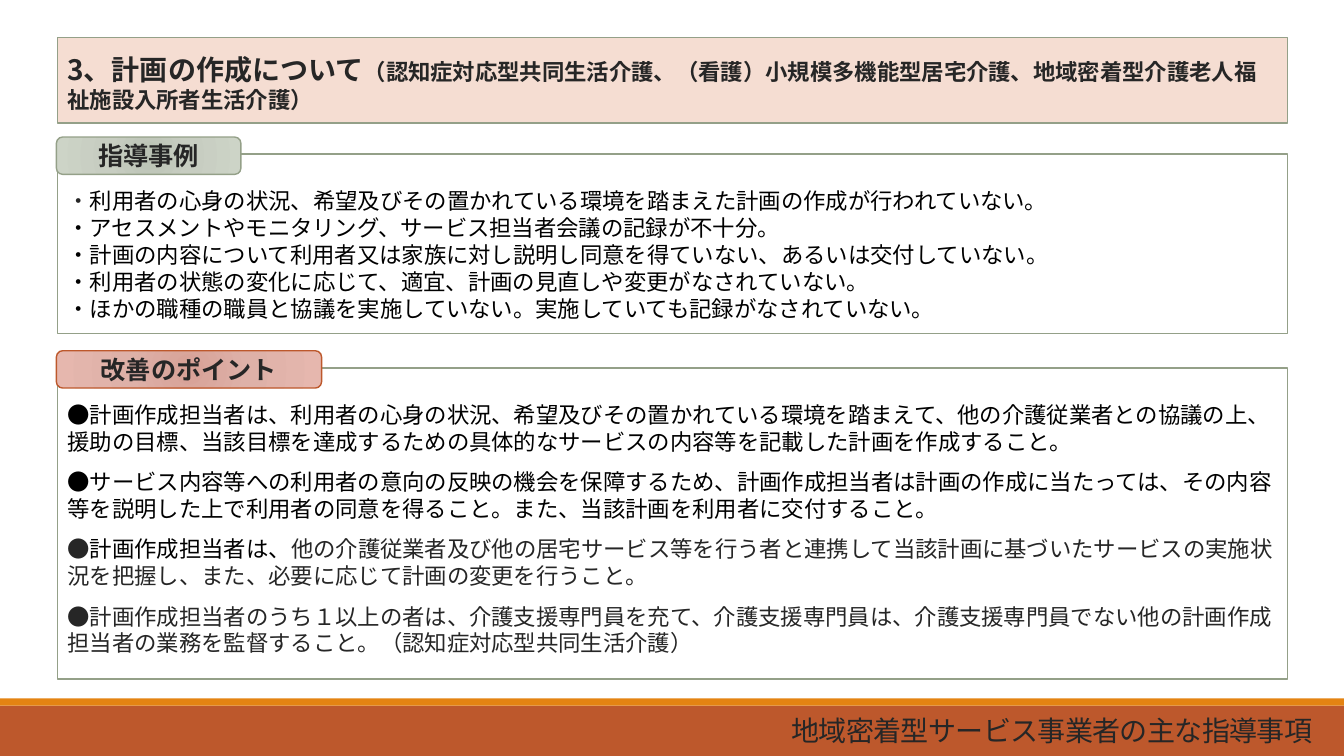
from lxml import etree
from pptx import Presentation
from pptx import util as u
from pptx.dml.color import RGBColor
from pptx.enum import lang, shapes, text
from pptx.oxml import ns

FONT = "Noto Sans CJK JP"
INK = RGBColor(0x26, 0x26, 0x26)
BLACK = RGBColor(0, 0, 0)
WHITE = RGBColor(0xFF, 0xFF, 0xFF)
SAGE = RGBColor(0x94, 0xA0, 0x88)
RUST = RGBColor(0xBD, 0x58, 0x2C)
ORANGE = RGBColor(0xE4, 0x83, 0x12)
PEACH = RGBColor(0xF5, 0xDD, 0xD2)
GREENS = [RGBColor(0xBB, 0xC3, 0xB5), RGBColor(0xC7, 0xCD, 0xC1), RGBColor(0xCD, 0xD4, 0xC7)]
REDS = [RGBColor(0xD7, 0xA1, 0x97), RGBColor(0xDE, 0xB1, 0xA8), RGBColor(0xE6, 0xB7, 0xAE)]

WIDTH, HEIGHT = 13.33, 7.5
LEFT, SPAN = 0.57, 12.2
PITCH = u.Pt(19.2)

HEAD = [
    ("3、計画の作成について", 20),
    ("（認知症対応型共同生活介護、（看護）小規模多機能型居宅介護、地域密着型介護老人福祉施設入所者生活介護）", 16),
]
CASES = [
    [("・", INK), ("利用者の心身の状況、希望及びその置かれている環境を踏まえた計画の作成が行われていない。", BLACK)],
    [("・アセスメントやモニタリング、サービス担当者会議の記録が不十分。", BLACK)],
    [("・計画の内容について利用者又は家族に対し説明し同意を得ていない、あるいは交付していない。", BLACK)],
    [("・利用者の状態の変化に応じて、適宜、計画の見直しや変更がなされていない。", BLACK)],
    [("・ほかの職種の職員と協議を実施していない。実施していても記録がなされていない。", BLACK)],
]
POINTS = [
    [("●計画作成担当者は、利用者の心身の状況、希望及びその置かれている環境を踏まえて、他の介護従業者との協議の上、援助の目標、当該目標を達成するための具体的なサービスの内容等を記載した計画を作成すること。", BLACK)],
    [("●サービス内容等への利用者の意向の反映の機会を保障するため、計画作成担当者は計画の作成に当たっては、その内容等を説明した上で利用者の同意を得ること。また、当該計画を利用者に交付すること。", BLACK)],
    [
        ("●", INK),
        ("計画作成担当者は、", BLACK),
        ("他の介護従業者及び他の居宅サービス等を行う者と連携して当該計画に基づいたサービスの実施状況を把握し、また、必要に応じて計画の変更を行うこと。", INK),
    ],
    [("●計画作成担当者のうち１以上の者は、介護支援専門員を充て、介護支援専門員は、介護支援専門員でない他の計画作成担当者の業務を監督すること。（認知症対応型共同生活介護）", INK)],
]


def style(run, size, color=INK, bold=False):
    font = run.font
    font.size, font.bold, font.name = u.Pt(size), bold, FONT
    font.color.rgb = color
    font.language_id = lang.MSO_LANGUAGE_ID.JAPANESE
    mark = run._r.get_or_add_rPr()
    etree.SubElement(mark, ns.qn("a:ea")).set("typeface", FONT)
    return mark


def place(item, box):
    item.left, item.top, item.width, item.height = map(u.Inches, box)


def paint(item, fill, line=None, width=1):
    item.fill.solid()
    item.fill.fore_color.rgb = fill
    if line is None:
        item.line.fill.background()
    else:
        item.line.color.rgb = line
        item.line.width = u.Pt(width)


def block(slide, box, kind=shapes.MSO_SHAPE.RECTANGLE):
    item = slide.shapes.add_shape(kind, *map(u.Inches, box))
    item.shadow.inherit = False
    return item


def glow(item, colors):
    item.fill.gradient()
    grad = item._element.spPr.find(ns.qn("a:gradFill"))
    for child in list(grad):
        grad.remove(child)
    stops = etree.SubElement(grad, ns.qn("a:gsLst"))
    for pos, color in zip((0, 45, 100), colors):
        stop = etree.SubElement(stops, ns.qn("a:gs"), pos=str(pos * 1000))
        etree.SubElement(stop, ns.qn("a:srgbClr"), val=str(color))
    route = etree.SubElement(grad, ns.qn("a:path"), path="circle")
    etree.SubElement(route, ns.qn("a:fillToRect"), dict.fromkeys("ltrb", "100000"))


def header(slide, box):
    item = block(slide, box)
    paint(item, PEACH, SAGE)
    frame = item.text_frame
    frame.word_wrap = True
    frame.margin_top = u.Inches(0.16)
    frame.vertical_anchor = text.MSO_ANCHOR.MIDDLE
    para = frame.paragraphs[0]
    para.alignment = text.PP_ALIGN.LEFT
    para.line_spacing = PITCH
    for words, size in HEAD:
        run = para.add_run()
        run.text = words
        style(run, size, bold=True)


def panel(item, box, rows, gap):
    place(item, box)
    paint(item, WHITE, SAGE, 1.25)
    frame = item.text_frame
    frame.auto_size = text.MSO_AUTO_SIZE.NONE
    frame.word_wrap = True
    frame.margin_top = u.Inches(0.33)
    for n, row in enumerate(rows):
        para = frame.add_paragraph() if n else frame.paragraphs[0]
        para.line_spacing = PITCH
        para.space_before = u.Pt(gap if n else 0)
        para.space_after = u.Pt(0)
        props = para._p.get_or_add_pPr()
        props.set("marL", "0")
        props.set("indent", "0")
        etree.SubElement(props, ns.qn("a:buNone"))
        for words, color in row:
            run = para.add_run()
            run.text = words
            style(run, 16, color)


def label(slide, box, words, colors, line):
    item = block(slide, box, shapes.MSO_SHAPE.ROUNDED_RECTANGLE)
    paint(item, WHITE, line)
    glow(item, colors)
    frame = item.text_frame
    frame.text = words
    frame.vertical_anchor = text.MSO_ANCHOR.MIDDLE
    para = frame.paragraphs[0]
    para.alignment = text.PP_ALIGN.CENTER
    style(para.runs[0], 18, bold=True)


def footer(slide, box):
    left, top, width, height = box
    paint(block(slide, box), RUST)
    paint(block(slide, (left, top - 0.07, width, 0.07)), ORANGE)
    title = slide.shapes.title
    place(title, (left + LEFT, top + 0.04, 12.54, height - 0.04))
    slide.shapes._spTree.append(title._element)
    frame = title.text_frame
    frame.text = "地域密着型サービス事業者の主な指導事項"
    frame.auto_size = text.MSO_AUTO_SIZE.NONE
    frame.vertical_anchor = text.MSO_ANCHOR.MIDDLE
    para = frame.paragraphs[0]
    para.alignment = text.PP_ALIGN.RIGHT
    para.line_spacing = 0.85
    style(para.runs[0], 20).set("spc", "-50")


def main():
    deck = Presentation()
    deck.slide_width, deck.slide_height = u.Inches(WIDTH), u.Inches(HEIGHT)
    slide = deck.slides.add_slide(deck.slide_layouts[3])
    upper, lower = list(slide.placeholders)[1:]
    header(slide, (LEFT, 0.37, SPAN, 0.85))
    panel(upper, (LEFT, 1.53, SPAN, 1.78), CASES, 0)
    panel(lower, (LEFT, 3.65, SPAN, 3.09), POINTS, 9.6)
    label(slide, (0.56, 1.36, 1.83, 0.37), "指導事例", GREENS, SAGE)
    label(slide, (0.56, 3.48, 2.63, 0.37), "改善のポイント", REDS, RUST)
    footer(slide, (0, 7, WIDTH, 0.5))
    deck.save("out.pptx")


if __name__ == "__main__":
    main()
